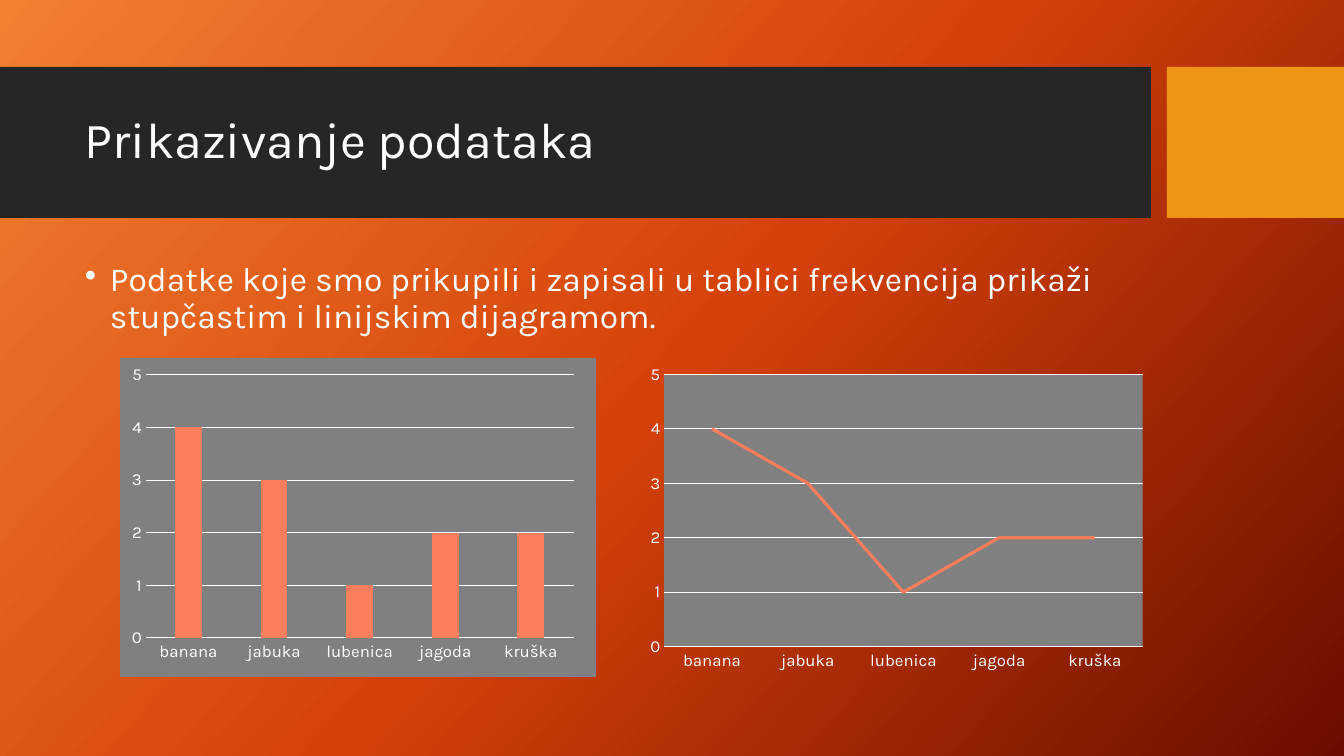
from dataclasses import dataclass
from typing import Optional

from lxml.etree import SubElement
from pptx import Presentation
from pptx.chart.chart import Chart
from pptx.chart.data import CategoryChartData
from pptx.dml.color import RGBColor
from pptx.enum.chart import XL_CHART_TYPE, XL_TICK_MARK
from pptx.enum.shapes import MSO_SHAPE
from pptx.enum.text import MSO_ANCHOR
from pptx.oxml import parse_xml
from pptx.oxml.ns import nsdecls, qn
from pptx.slide import Slide
from pptx.text.text import Font
from pptx.util import Emu, Pt

SLIDE_W, SLIDE_H = 1344, 756
EMU_PER_PX = 12192000 / SLIDE_W
FONT = "Karla"
COLORS = {
    "white": "FFFFFF", "band": "262626", "accent": "F09415",
    "panel": "808080", "series": "FA7E5C",
}
GRADIENT = {0: "F18031", 50: "D54209", 100: "6A0D00"}
GRADIENT_ANGLE = 42
FRUIT = {"banana": 4, "jabuka": 3, "lubenica": 1, "jagoda": 2, "kruška": 2}


@dataclass
class Box:
    x: int
    y: int
    w: int
    h: int

    def emu(self) -> list[Emu]:
        return [px(v) for v in (self.x, self.y, self.w, self.h)]


@dataclass
class Block:
    box: Box
    color: str


@dataclass
class TextItem:
    box: Box
    text: str
    size: int
    anchor: MSO_ANCHOR
    bullet: bool = False


@dataclass
class FruitChart:
    box: Box
    kind: XL_CHART_TYPE
    area_fill: Optional[str] = None
    plot_fill: Optional[str] = None
    layout: Optional[dict[str, float]] = None


BLOCKS = [
    Block(Box(0, 67, 1151, 151), "band"),
    Block(Box(1167, 67, 177, 151), "accent"),
]
TEXTS = [
    TextItem(Box(75, 83, 1059, 119), "Prikazivanje podataka", 36, MSO_ANCHOR.MIDDLE),
    TextItem(
        Box(75, 258, 1059, 397),
        "Podatke koje smo prikupili i zapisali u tablici frekvencija "
        "prikaži stupčastim i linijskim dijagramom.",
        24, MSO_ANCHOR.TOP, bullet=True,
    ),
]
CHARTS = [
    FruitChart(
        Box(120, 358, 476, 319), XL_CHART_TYPE.COLUMN_CLUSTERED, area_fill="panel",
        layout={"x": 0.054, "y": 0.053, "w": 0.899, "h": 0.825},
    ),
    FruitChart(Box(640, 358, 513, 319), XL_CHART_TYPE.LINE, plot_fill="panel"),
]


def px(value: int) -> Emu:
    return Emu(round(value * EMU_PER_PX))


def rgb(name: str) -> RGBColor:
    return RGBColor.from_string(COLORS[name])


def set_font(font: Font, size: int) -> None:
    for name, value in {"name": FONT, "size": Pt(size)}.items():
        setattr(font, name, value)
    font.color.rgb = rgb("white")


def paint_background(s: Slide) -> None:
    fill = s.background.fill
    fill.gradient()
    fill.gradient_angle = 360 - GRADIENT_ANGLE
    stops = next(s.element.iter(qn("a:gsLst")))
    for stop in list(stops):
        stops.remove(stop)
    for position, color in GRADIENT.items():
        stop = SubElement(stops, qn("a:gs"), pos=str(position * 1000))
        SubElement(stop, qn("a:srgbClr"), val=color)


def add_block(s: Slide, block: Block) -> None:
    sp = s.shapes.add_shape(MSO_SHAPE.RECTANGLE, *block.box.emu())
    sp.shadow.inherit = False
    sp.fill.solid()
    sp.fill.fore_color.rgb = rgb(block.color)
    sp.line.fill.background()


def add_text(s: Slide, item: TextItem) -> None:
    tf = s.shapes.add_textbox(*item.box.emu()).text_frame
    tf.word_wrap = True
    tf.vertical_anchor = item.anchor
    p = tf.paragraphs[0]
    p.line_spacing = 0.9
    if item.bullet:
        props = p._p.get_or_add_pPr()
        indent = px(25)
        props.set("marL", str(indent))
        props.set("indent", str(-indent))
        SubElement(props, qn("a:buChar"), char="•")
    r = p.add_run()
    r.text = item.text
    set_font(r.font, item.size)


def fill_xml(color: Optional[str]) -> str:
    """Shape properties with a solid or empty fill and no outline."""
    fill = (f'<a:solidFill><a:srgbClr val="{COLORS[color]}"/></a:solidFill>'
            if color else "<a:noFill/>")
    return f'<c:spPr {nsdecls("c", "a")}>{fill}<a:ln><a:noFill/></a:ln></c:spPr>'


def set_layout(chart: Chart, layout: dict[str, float]) -> None:
    """Fix the inner plot area as fractions of the chart."""
    modes = {"layoutTarget": "inner", "xMode": "edge", "yMode": "edge"}
    parts = "".join(f'<c:{k} val="{v}"/>' for k, v in (modes | layout).items())
    plot_area = next(chart.element.iter(qn("c:plotArea")))
    for old in plot_area.findall(qn("c:layout")):
        plot_area.remove(old)
    plot_area.insert(0, parse_xml(
        f'<c:layout {nsdecls("c")}><c:manualLayout>{parts}</c:manualLayout></c:layout>'))


def style_axes(chart: Chart) -> None:
    value, category = chart.value_axis, chart.category_axis
    for axis in (value, category):
        axis.major_tick_mark = axis.minor_tick_mark = XL_TICK_MARK.NONE
        set_font(axis.tick_labels.font, 12)
    for name, number in {"minimum_scale": 0, "maximum_scale": 5, "major_unit": 1}.items():
        setattr(value, name, number)
    value.has_major_gridlines = True
    value.format.line.fill.background()
    for line in (value.major_gridlines.format.line, category.format.line):
        line.color.rgb = rgb("white")
        line.width = Pt(0.75)


def add_fruit_chart(s: Slide, item: FruitChart) -> None:
    data = CategoryChartData()
    data.categories = list(FRUIT)
    data.add_series("Series 1", list(FRUIT.values()))
    chart = s.shapes.add_chart(item.kind, *item.box.emu(), data).chart
    chart.has_title = chart.has_legend = False
    set_font(chart.font, 10)
    style_axes(chart)
    plot = chart.plots[0]
    plot.vary_by_categories = False
    series = plot.series[0]
    if item.kind == XL_CHART_TYPE.LINE:
        series.smooth = False
        series.format.line.color.rgb = rgb("series")
        series.format.line.width = Pt(2.25)
    else:
        plot.gap_width, plot.overlap = 219, -27
        series.format.fill.solid()
        series.format.fill.fore_color.rgb = rgb("series")
    if item.layout:
        set_layout(chart, item.layout)
    next(chart.element.iter(qn("c:plotArea"))).append(parse_xml(fill_xml(item.plot_fill)))
    chart.element.find(qn("c:chart")).addnext(parse_xml(fill_xml(item.area_fill)))


def main() -> None:
    prs = Presentation()
    prs.slide_width, prs.slide_height = px(SLIDE_W), px(SLIDE_H)
    s = prs.slides.add_slide(prs.slide_layouts[6])
    paint_background(s)
    for block in BLOCKS:
        add_block(s, block)
    for item in TEXTS:
        add_text(s, item)
    for item in CHARTS:
        add_fruit_chart(s, item)
    prs.save("out.pptx")


if __name__ == "__main__":
    main()
